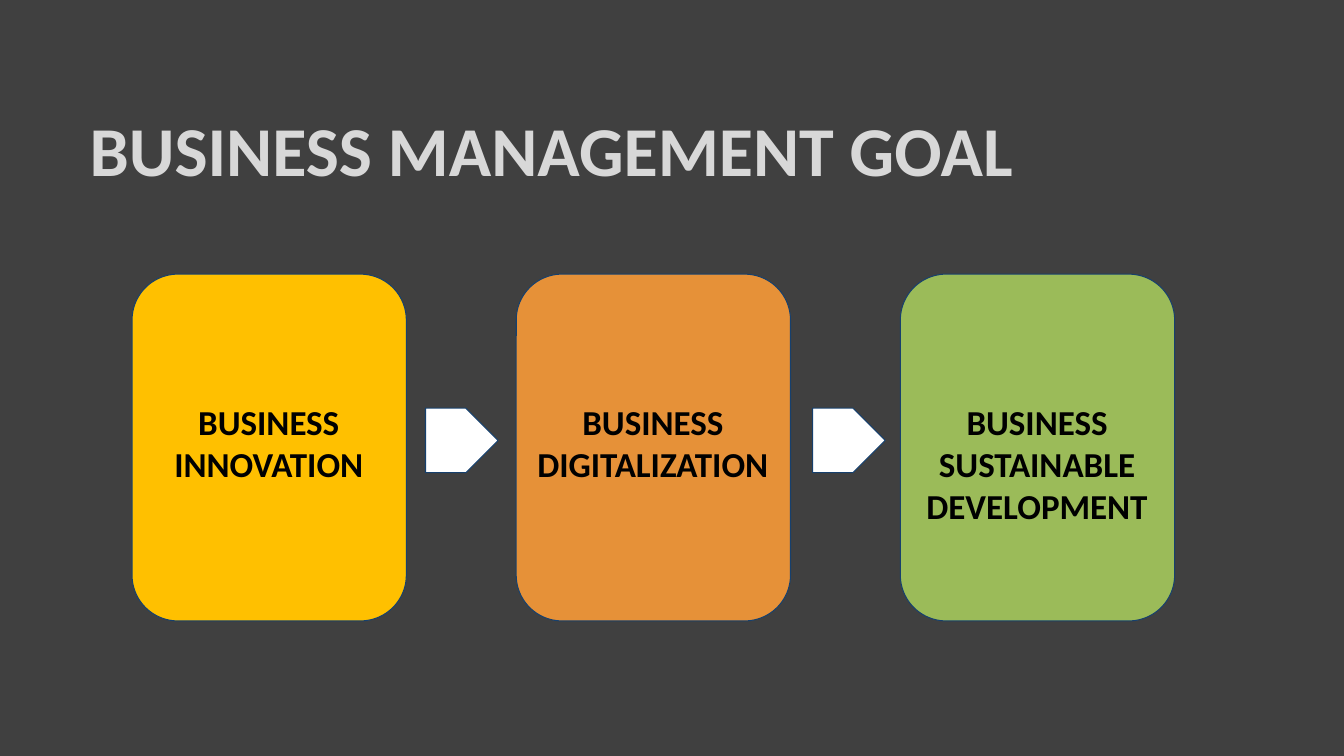
from dataclasses import dataclass

from pptx import Presentation
from pptx.dml.color import RGBColor
from pptx.enum.shapes import MSO_SHAPE
from pptx.enum.text import MSO_ANCHOR, PP_ALIGN
from pptx.slide import Slide
from pptx.util import Inches, Pt

DARK = RGBColor(0x40, 0x40, 0x40)
PALE = RGBColor(0xD8, 0xD8, 0xD8)
NAVY = RGBColor(0x17, 0x40, 0x6D)
GOLD = RGBColor(0xFF, 0xC0, 0x00)
ORANGE = RGBColor(0xE6, 0x91, 0x38)
GREEN = RGBColor(0x9B, 0xBB, 0x59)
WHITE = RGBColor(0xFF, 0xFF, 0xFF)
BLACK = RGBColor(0x00, 0x00, 0x00)

LEFT, STEP = 1.31, 3.81


@dataclass
class Box:
    left: float
    top: float
    width: float
    height: float


@dataclass
class Goal:
    label: str
    fill: RGBColor


GOALS = [
    Goal("BUSINESS INNOVATION", GOLD),
    Goal("BUSINESS DIGITALIZATION", ORANGE),
    Goal("BUSINESS SUSTAINABLE DEVELOPMENT", GREEN),
]
ARROWS = [Box(left, 4.05, 0.72, 0.64) for left in (4.22, 8.06)]


def spots(box: Box) -> tuple[int, int, int, int]:
    """Give the box as lengths for the add methods."""
    return Inches(box.left), Inches(box.top), Inches(box.width), Inches(box.height)


def add_block(slide: Slide, kind: MSO_SHAPE, box: Box, fill: RGBColor, bend: float) -> None:
    shape = slide.shapes.add_shape(kind, *spots(box))
    shape.adjustments[0] = bend
    shape.shadow.inherit = False
    shape.fill.solid()
    shape.fill.fore_color.rgb = fill
    shape.line.color.rgb = NAVY
    shape.line.width = Pt(0.75)


def add_text(slide: Slide, box: Box, text: str, size: int, color: RGBColor,
             align: PP_ALIGN, anchor: MSO_ANCHOR) -> None:
    frame = slide.shapes.add_textbox(*spots(box)).text_frame
    frame.word_wrap = True
    frame.vertical_anchor = anchor
    frame.margin_left = frame.margin_right = Inches(0.13)
    frame.margin_top = frame.margin_bottom = Inches(0.06)
    frame.text = text
    line = frame.paragraphs[0]
    line.alignment = align
    font = line.runs[0].font
    font.name = "Calibri"
    font.size = Pt(size)
    font.bold = True
    font.color.rgb = color


def main() -> None:
    deck = Presentation()
    deck.slide_width = Inches(13.33)
    deck.slide_height = Inches(7.5)
    slide = deck.slides.add_slide(deck.slide_layouts[6])
    slide.background.fill.solid()
    slide.background.fill.fore_color.rgb = DARK

    add_text(slide, Box(0.76, 0.94, 11.44, 1.06), "BUSINESS MANAGEMENT GOAL", 50, PALE,
             PP_ALIGN.JUSTIFY, MSO_ANCHOR.MIDDLE)
    for index, goal in enumerate(GOALS):
        left = LEFT + index * STEP
        add_block(slide, MSO_SHAPE.ROUNDED_RECTANGLE, Box(left, 2.72, 2.72, 3.44),
                  goal.fill, 0.167)
        add_text(slide, Box(left + 0.06, 3.91, 2.59, 1.06), goal.label, 25, BLACK,
                 PP_ALIGN.CENTER, MSO_ANCHOR.TOP)
    for arrow in ARROWS:
        add_block(slide, MSO_SHAPE.PENTAGON, arrow, WHITE, 0.5)
    deck.save("out.pptx")


if __name__ == "__main__":
    main()
